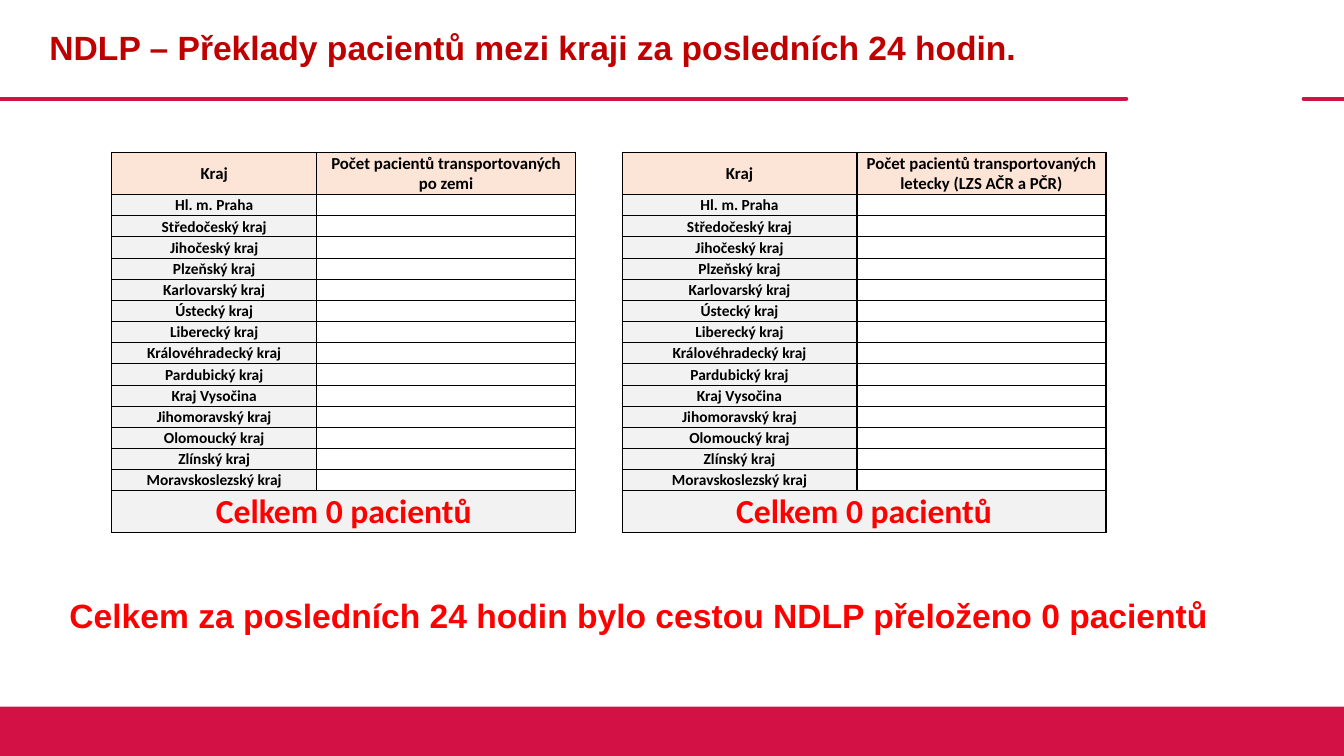
from lxml import etree
from pptx import Presentation
from pptx import util as u
from pptx.dml.color import RGBColor
from pptx.enum import shapes, text
from pptx.oxml import ns

CRIMSON = RGBColor(0xD3, 0x11, 0x45)
DARK_RED = RGBColor(0xC0, 0x00, 0x00)
RED = RGBColor(0xFF, 0x00, 0x00)
BLACK = RGBColor(0x00, 0x00, 0x00)
PEACH = RGBColor(0xFC, 0xE4, 0xD6)
GREY = RGBColor(0xF2, 0xF2, 0xF2)

REGIONS = [
    "Hl. m. Praha", "Středočeský kraj", "Jihočeský kraj", "Plzeňský kraj",
    "Karlovarský kraj", "Ústecký kraj", "Liberecký kraj",
    "Královéhradecký kraj", "Pardubický kraj", "Kraj Vysočina",
    "Jihomoravský kraj", "Olomoucký kraj", "Zlínský kraj",
    "Moravskoslezský kraj",
]
TOTAL = "Celkem 0 pacientů"
HEADER_HEIGHT, REGION_HEIGHT, TOTAL_HEIGHT = 0.42, 0.21, 0.41


def write(frame, content, font="Calibri", size=11, color=BLACK,
          align=text.PP_ALIGN.CENTER, spacing=None):
    """Fill a text frame with bold text, one paragraph per line."""
    frame.text = content
    for para in frame.paragraphs:
        para.alignment = align
        if spacing:
            para.line_spacing = spacing
        for span in para.runs:
            span.font.name = font
            span.font.size = u.Pt(size)
            span.font.bold = True
            span.font.color.rgb = color


class Report:
    def __init__(self, deck):
        self.page = deck.slides.add_slide(deck.slide_layouts[5])
        self.items = self.page.shapes

    def rule(self, start, end, top):
        line = self.items.add_connector(
            shapes.MSO_CONNECTOR.STRAIGHT, u.Inches(start), u.Inches(top),
            u.Inches(end), u.Inches(top))
        line.line.color.rgb = CRIMSON
        line.line.width = u.Pt(3)
        properties = line.element.spPr
        properties.find(ns.qn("a:ln")).set("cap", "rnd")
        etree.SubElement(properties, ns.qn("a:effectLst"))

    def bar(self, left, top, width, height):
        bar = self.items.add_shape(
            shapes.MSO_SHAPE.RECTANGLE, u.Inches(left), u.Inches(top),
            u.Inches(width), u.Inches(height))
        bar.shadow.inherit = False
        bar.fill.solid()
        bar.fill.fore_color.rgb = CRIMSON
        bar.line.fill.background()

    def title(self, content, left, top, width, height):
        box = self.items.title
        box.left, box.top = u.Inches(left), u.Inches(top)
        box.width, box.height = u.Inches(width), u.Inches(height)
        box.text_frame.vertical_anchor = text.MSO_ANCHOR.MIDDLE
        write(box.text_frame, content, font="Arial", size=24, color=DARK_RED,
              align=text.PP_ALIGN.LEFT, spacing=0.9)

    def label(self, content, left, top, width, height):
        box = self.items.add_textbox(
            u.Inches(left), u.Inches(top), u.Inches(width), u.Inches(height))
        box.text_frame.word_wrap = True
        write(box.text_frame, content, font="Arial", size=24, color=RED)

    def cell(self, cell, content="", fill=None, top=0.5, bottom=0.5, **style):
        cell.margin_left = cell.margin_right = cell.margin_top = u.Inches(0.01)
        cell.margin_bottom = 0
        cell.vertical_anchor = text.MSO_ANCHOR.MIDDLE
        write(cell.text_frame, content, **style)
        if not content:
            # An empty paragraph takes its height from its end mark
            para = cell.text_frame.paragraphs[0]
            etree.SubElement(para._p, ns.qn("a:endParaRPr"), sz="1100")
        properties = cell._tc.get_or_add_tcPr()
        for side, width in zip("LRTB", (1, 1, top, bottom)):
            border = etree.SubElement(properties, ns.qn(f"a:ln{side}"),
                                      w=str(u.Pt(width)))
            solid = etree.SubElement(border, ns.qn("a:solidFill"))
            etree.SubElement(solid, ns.qn("a:srgbClr"), val=str(BLACK))
        if fill is None:
            cell.fill.background()
        else:
            cell.fill.solid()
            cell.fill.fore_color.rgb = fill

    def region_table(self, heading, left, top, widths):
        heights = [HEADER_HEIGHT, *[REGION_HEIGHT] * len(REGIONS), TOTAL_HEIGHT]
        table = self.items.add_table(
            len(heights), len(widths), u.Inches(left), u.Inches(top),
            u.Inches(sum(widths)), u.Inches(sum(heights))).table
        table.horz_banding = False
        for column, width in zip(table.columns, widths):
            column.width = u.Inches(width)
        for row, height in zip(table.rows, heights):
            row.height = u.Inches(height)

        for column, content in enumerate(("Kraj", heading)):
            self.cell(table.cell(0, column), content, PEACH, top=1, size=12)
        for row, region in enumerate(REGIONS, start=1):
            self.cell(table.cell(row, 0), region, GREY)
            self.cell(table.cell(row, 1))

        last = len(heights) - 1
        table.cell(last, 0).merge(table.cell(last, 1))
        self.cell(table.cell(last, 0), TOTAL, GREY, bottom=1, size=24, color=RED)
        self.cell(table.cell(last, 1), fill=GREY, bottom=1)


def main():
    deck = Presentation()
    deck.slide_width, deck.slide_height = u.Inches(13.33), u.Inches(7.5)
    report = Report(deck)

    # Frame of the page
    report.rule(0, 11.17, 0.98)
    report.rule(12.93, 13.33, 0.98)
    report.bar(0, 7.01, 13.33, 0.49)
    report.title("NDLP – Překlady pacientů mezi kraji za posledních 24 hodin.",
                 0.39, 0, 10.81, 0.98)

    # Transfers by ground and by air
    report.region_table("Počet pacientů transportovaných\npo zemi",
                        1.11, 1.51, (2.03, 2.57))
    report.region_table("Počet pacientů transportovaných letecky (LZS AČR a PČR)",
                        6.17, 1.51, (2.33, 2.47))

    # Overall total
    report.label("Celkem za posledních 24 hodin bylo cestou NDLP přeloženo 0 pacientů",
                 0.51, 5.85, 11.65, 0.5)

    deck.save("out.pptx")


if __name__ == "__main__":
    main()
